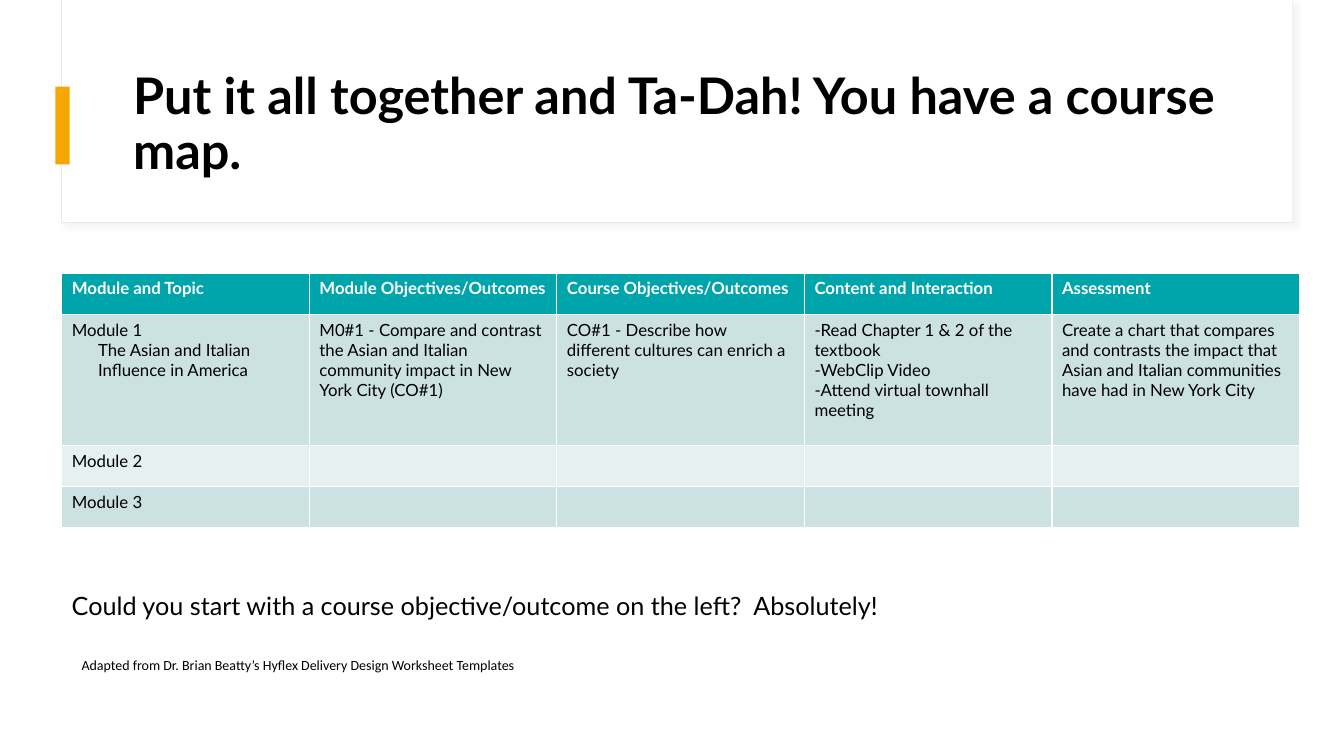
"""Build the course map slide with its title, table and closing remarks."""
import pptx
import pptx.dml.color
import pptx.enum.shapes
import pptx.enum.text
import pptx.oxml
import pptx.util

COLORS = {
    "white": "FFFFFF", "black": "000000", "edge": "E9E9E9", "shadow": "D9D9D9",
    "amber": "F5A700", "teal": "00A5AB", "dark_band": "CCE1E2", "light_band": "E7F0F1",
}
COURSE_MAP = [
    ["Module and Topic", "Module Objectives/Outcomes", "Course Objectives/Outcomes",
     "Content and Interaction", "Assessment"],
    ["Module 1\n\tThe Asian and Italian\n\tInfluence in America",
     "M0#1 - Compare and contrast the Asian and Italian community impact in New York City (CO#1)",
     "CO#1 - Describe how different cultures can enrich a society",
     "-Read Chapter 1 & 2 of the textbook\n-WebClip Video\n-Attend virtual townhall meeting",
     "Create a chart that compares and contrasts the impact that Asian and Italian "
     "communities have had in New York City"],
    ["Module 2", "", "", "", ""],
    ["Module 3", "", "", "", ""],
]
ROW_SHARES = [5.47, 17.33, 5.47, 5.4]
ROW_FILLS = ["teal", "dark_band", "light_band", "dark_band"]
SHADOW = (
    '<a:effectLst xmlns:a="http://schemas.openxmlformats.org/drawingml/2006/main">'
    '<a:outerShdw blurRad="50800" dist="38100" dir="2700000" algn="tl" rotWithShape="0">'
    f'<a:srgbClr val="{COLORS["shadow"]}"><a:alpha val="30000"/></a:srgbClr>'
    '</a:outerShdw></a:effectLst>'
)


def color(name):
    return pptx.dml.color.RGBColor.from_string(COLORS[name])


class CourseSlide:
    """Places styled elements by percentages of the slide's size."""

    def __init__(self, presentation):
        self.width = presentation.slide_width
        self.height = presentation.slide_height
        self.slide = presentation.slides.add_slide(presentation.slide_layouts[5])
        self.shapes = self.slide.shapes

    def box(self, left, top, width, height):
        return [int(share * side / 100) for share, side in
                zip((left, top, width, height), (self.width, self.height) * 2)]

    def fill_frame(self, frame, text, size, font="Lato", ink="black", bold=False, spacing=1.0):
        style = {"name": font, "size": pptx.util.Pt(size), "bold": bold}
        for index, line in enumerate(text.split("\n")):
            paragraph = frame.paragraphs[0] if index == 0 else frame.add_paragraph()
            paragraph.line_spacing = spacing
            if line.startswith("\t"):
                paragraph._p.get_or_add_pPr().set("marL", str(pptx.util.Inches(0.26)))
            run = paragraph.add_run()
            run.text = line.strip()
            for name, value in style.items():
                setattr(run.font, name, value)
            run.font.color.rgb = color(ink)

    def rectangle(self, place, fill, edge=None, shadow=False):
        shape = self.shapes.add_shape(
            pptx.enum.shapes.MSO_SHAPE.RECTANGLE, *self.box(*place))
        shape.fill.solid()
        shape.fill.fore_color.rgb = color(fill)
        if edge:
            shape.line.color.rgb = color(edge)
            shape.line.width = pptx.util.Pt(0.75)
        else:
            shape.line.fill.background()
        if shadow:
            shape._element.spPr.append(pptx.oxml.parse_xml(SHADOW))
        else:
            shape.shadow.inherit = False

    def title(self, place, text):
        title = self.shapes.title
        for name, value in zip(("left", "top", "width", "height"), self.box(*place)):
            setattr(title, name, value)
        frame_format = {
            "word_wrap": True,
            "auto_size": pptx.enum.text.MSO_AUTO_SIZE.NONE,
            "vertical_anchor": pptx.enum.text.MSO_ANCHOR.MIDDLE,
        }
        for name, value in frame_format.items():
            setattr(title.text_frame, name, value)
        self.fill_frame(title.text_frame, text, 36, bold=True, spacing=0.9)
        for paragraph in title.text_frame.paragraphs:
            paragraph.alignment = pptx.enum.text.PP_ALIGN.LEFT
        self.shapes._spTree.append(title._element)

    def text(self, place, text, size, font="Lato"):
        frame = self.shapes.add_textbox(*self.box(*place)).text_frame
        frame.word_wrap = True
        self.fill_frame(frame, text, size, font)

    def table(self, place, rows, row_shares, row_fills):
        box = self.box(*place, sum(row_shares))
        table = self.shapes.add_table(len(rows), len(rows[0]), *box).table
        for row_index, texts in enumerate(rows):
            table.rows[row_index].height = int(row_shares[row_index] * self.height / 100)
            header = row_index == 0
            for column_index, text in enumerate(texts):
                cell = table.cell(row_index, column_index)
                cell.fill.solid()
                cell.fill.fore_color.rgb = color(row_fills[row_index])
                if text:
                    self.fill_frame(cell.text_frame, text, 12,
                                    ink="white" if header else "black", bold=header)


def main():
    presentation = pptx.Presentation()
    presentation.slide_width = pptx.util.Inches(13.33)
    presentation.slide_height = pptx.util.Inches(7.5)
    slide = CourseSlide(presentation)
    slide.rectangle((4.6, 0, 91.6, 29.47), "white", edge="edge", shadow=True)
    slide.rectangle((4.65, 0, 91.52, 29.33), "white")
    slide.rectangle((4.13, 11.47, 1.05, 10.27), "amber")
    slide.title((9.15, 8, 83.42, 17.2),
                "Put it all together and Ta-Dah! You have a course map.")
    slide.table((4.6, 36.13, 92.1), COURSE_MAP, ROW_SHARES, ROW_FILLS)
    slide.text((5.33, 86.13, 69.4, 7.6),
               "Adapted from Dr. Brian Beatty’s Hyflex Delivery Design Worksheet Templates",
               10, "Calibri")
    slide.text((4.6, 77.47, 92.87, 5.33),
               "Could you start with a course objective/outcome on the left?  Absolutely!", 18)
    presentation.save("out.pptx")


if __name__ == "__main__":
    main()
